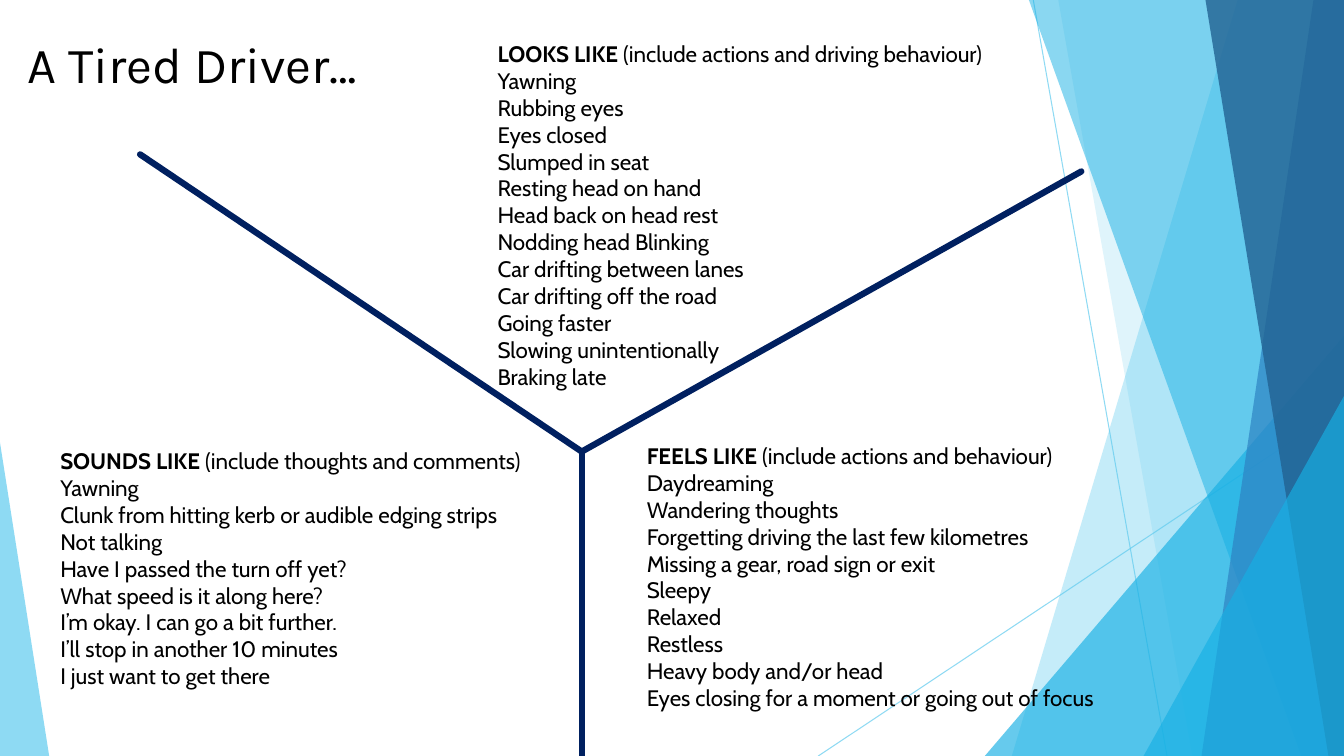
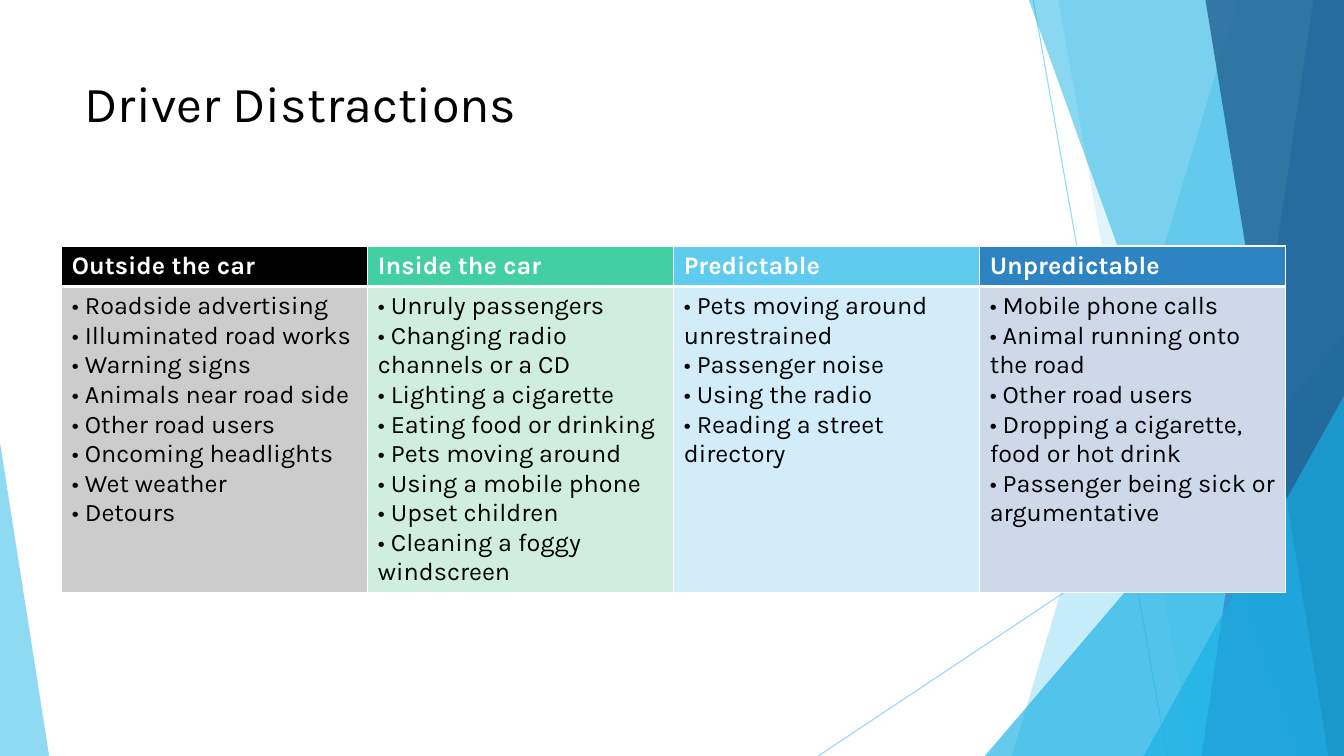
from dataclasses import dataclass

from lxml.etree import SubElement
from pptx import Presentation
from pptx.dml.color import RGBColor as Rgb
from pptx.enum.shapes import MSO_CONNECTOR as Link, MSO_SHAPE as Form
from pptx.enum.text import MSO_ANCHOR as Anchor, MSO_AUTO_SIZE as Fit, PP_ALIGN as Align
from pptx.oxml.ns import qn
from pptx.util import Cm, Pt


@dataclass(frozen=True)
class Theme:
    black: str = "000000"
    white: str = "FFFFFF"
    navy: str = "002060"
    sky: str = "5FCBEF"
    cyan: str = "17B0E4"
    blue: str = "2E83C3"
    deep: str = "226292"
    green: str = "42D0A2"
    head: str = "Karla"
    body: str = "Cabin"
    title: int = 36
    cell: int = 18
    note: int = 16


T = Theme()
WIDE, HIGH = 33.87, 19.05


def write(para, text, font, size, color=T.black, bold=False):
    run = para.add_run()
    run.text = text
    run.font.name = font
    run.font.size = Pt(size)
    run.font.bold = bold
    run.font.color.rgb = Rgb.from_string(color)


def draw(slide, ends, color, width):
    """Add a straight, shadowless line with round caps; ends are in cm."""
    line = slide.shapes.add_connector(Link.STRAIGHT, *map(Cm, ends))
    line.line.color.rgb = Rgb.from_string(color)
    line.line.width = Pt(width)
    props = line.element.spPr
    props.find(qn("a:ln")).set("cap", "rnd")
    SubElement(props, qn("a:effectLst"))
    return line


prs = Presentation()
prs.slide_width, prs.slide_height = Cm(WIDE), Cm(HIGH)
layout = prs.slide_layouts[5]

# Slides and titles
titles = [
    ("A Tired Driver…", (0.43, 0.71, 10.52, 1.98)),
    ("Driver Distractions", (1.88, 1.7, 23.88, 3.66)),
]
slides = []
for text, box in titles:
    slide = prs.slides.add_slide(layout)
    title = slide.shapes.title
    title.left, title.top, title.width, title.height = map(Cm, box)
    frame = title.text_frame
    frame.auto_size = Fit.NONE
    frame.vertical_anchor = Anchor.TOP
    para = frame.paragraphs[0]
    para.alignment = Align.LEFT
    write(para, text, T.head, T.title)
    slides.append(slide)
tired, risks = slides

# Facets: drawn once, then moved to the shared layout
# A band gives its left edge (top x, bottom x); a triangle its box and tip
facets = [
    ("band", (31.19, 25.5), T.sky, 36),
    ("band", (26.67, 30.05), T.sky, 20),
    ("tri", (24.82, 8.46, 9.05, 10.59, 1), T.cyan, 66),
    ("band", (25.93, 32.79), T.cyan, 50),
    ("band", (33.1, 30.28), T.blue, 70),
    ("band", (30.38, 33.48), T.deep, 80),
    ("tri", (28.82, 9.98, 5.05, 9.07, 1), T.cyan, 66),
    ("tri", (0, 11.15, 1.24, 7.9, 0), T.sky, 70),
]
rays = [(26.04, 0, 29.41, HIGH), (WIDE, 10.24, 20.62, HIGH)]
art = [(draw(tired, ends, T.sky, 0.75), 70) for ends in rays]
for kind, geo, color, alpha in facets:
    if kind == "band":
        top, foot = geo
        pen = tired.shapes.build_freeform(Cm(top), 0)
        edge = [(WIDE, 0), (WIDE, HIGH), (foot, HIGH)]
        pen.add_line_segments([(Cm(x), Cm(y)) for x, y in edge])
        shape = pen.convert_to_shape()
    else:
        *box, tip = geo
        shape = tired.shapes.add_shape(Form.ISOSCELES_TRIANGLE, *map(Cm, box))
        shape.adjustments[0] = tip
    shape.shadow.inherit = False
    shape.fill.solid()
    shape.fill.fore_color.rgb = Rgb.from_string(color)
    shape.line.fill.background()
    art.append((shape, alpha))

for rank, (shape, alpha) in enumerate(art):
    item = shape.element
    for tint in item.iter(qn("a:srgbClr")):
        SubElement(tint, qn("a:alpha"), val=str(alpha * 1000))
    next(item.iter(qn("p:cNvPr"))).set("id", str(100 + rank))
    layout.shapes.element.insert(2 + rank, item)

# Slide 1: Y chart
hub = (14.66, 11.38)
for end in [(3.53, 3.89), (14.66, HIGH), (27.25, 4.32)]:
    draw(tired, hub + end, T.navy, 4.5)

notes = [
    ((12.29, 0.89, 14.48, 9.91), "LOOKS LIKE ", "(include actions and driving behaviour)", [
        "Yawning",
        "Rubbing eyes",
        "Eyes closed",
        "Slumped in seat",
        "Resting head on hand",
        "Head back on head rest",
        "Nodding head Blinking",
        "Car drifting between lanes",
        "Car drifting off the road",
        "Going faster",
        "Slowing unintentionally",
        "Braking late",
    ]),
    ((16.05, 11.02, 12.57, 7.87), "FEELS LIKE ", "(include actions and behaviour)", [
        "Daydreaming",
        "Wandering thoughts",
        "Forgetting driving the last few kilometres",
        "Missing a gear, road sign or exit",
        "Sleepy",
        "Relaxed",
        "Restless",
        "Heavy body and/or head",
        "Eyes closing for a moment or going out of focus",
    ]),
    ((1.27, 11.15, 13.13, 7.9), "SOUNDS LIKE ", "(include thoughts and comments)", [
        "Yawning",
        "Clunk from hitting kerb or audible edging strips",
        "Not talking",
        "Have I passed the turn off yet?",
        "What speed is it along here?",
        "I’m okay. I can go a bit further.",
        "I’ll stop in another 10 minutes",
        "I just want to get there",
    ]),
]
for box, label, hint, lines in notes:
    frame = tired.shapes.add_textbox(*map(Cm, box)).text_frame
    frame.word_wrap = True
    para = frame.paragraphs[0]
    write(para, label, T.body, T.note, bold=True)
    write(para, hint, T.body, T.note)
    for line in lines:
        write(frame.add_paragraph(), line, T.body, T.note)

# Slide 2: one table for each kind of distraction
LEFT, TOP, STEP = 1.56, 6.2, 7.71
ROWS = (1.02, 7.72)
groups = [
    ("Outside the car", T.black, "CCCCCC", [
        "Roadside advertising",
        "Illuminated road works",
        "Warning signs",
        "Animals near road side",
        "Other road users",
        "Oncoming headlights",
        "Wet weather",
        "Detours",
    ]),
    ("Inside the car", T.green, "CFEEE0", [
        "Unruly passengers",
        "Changing radio channels or a CD",
        "Lighting a cigarette",
        "Eating food or drinking",
        "Pets moving around",
        "Using a mobile phone",
        "Upset children",
        "Cleaning a foggy windscreen",
    ]),
    ("Predictable", T.sky, "D2ECF9", [
        "Pets moving around unrestrained",
        "Passenger noise",
        "Using the radio",
        "Reading a street directory",
    ]),
    ("Unpredictable", T.blue, "CDD9E9", [
        "Mobile phone calls",
        "Animal running onto the road",
        "Other road users",
        "Dropping a cigarette, food or hot drink",
        "Passenger being sick or argumentative",
    ]),
]
for col, (name, dark, pale, lines) in enumerate(groups):
    box = (LEFT + col * STEP, TOP, STEP, sum(ROWS))
    table = risks.shapes.add_table(2, 1, *map(Cm, box)).table
    table.horz_banding = False
    for row, high in enumerate(ROWS):
        table.rows[row].height = Cm(high)
        cell = table.cell(row, 0)
        props = cell._tc.get_or_add_tcPr()
        for side in "LRTB":
            thick = 3 if (row, side) in [(0, "B"), (1, "T")] else 1
            rule = SubElement(props, qn("a:ln" + side), w=str(Pt(thick)))
            paint = SubElement(rule, qn("a:solidFill"))
            SubElement(paint, qn("a:srgbClr"), val=T.white)
        cell.fill.solid()
        cell.fill.fore_color.rgb = Rgb.from_string(pale if row else dark)
    top, body = table.cell(0, 0).text_frame, table.cell(1, 0).text_frame
    write(top.paragraphs[0], name, T.head, T.cell, T.white, bold=True)
    for rank, line in enumerate(lines):
        para = body.add_paragraph() if rank else body.paragraphs[0]
        write(para, "• " + line, T.head, T.cell)

prs.save("out.pptx")
